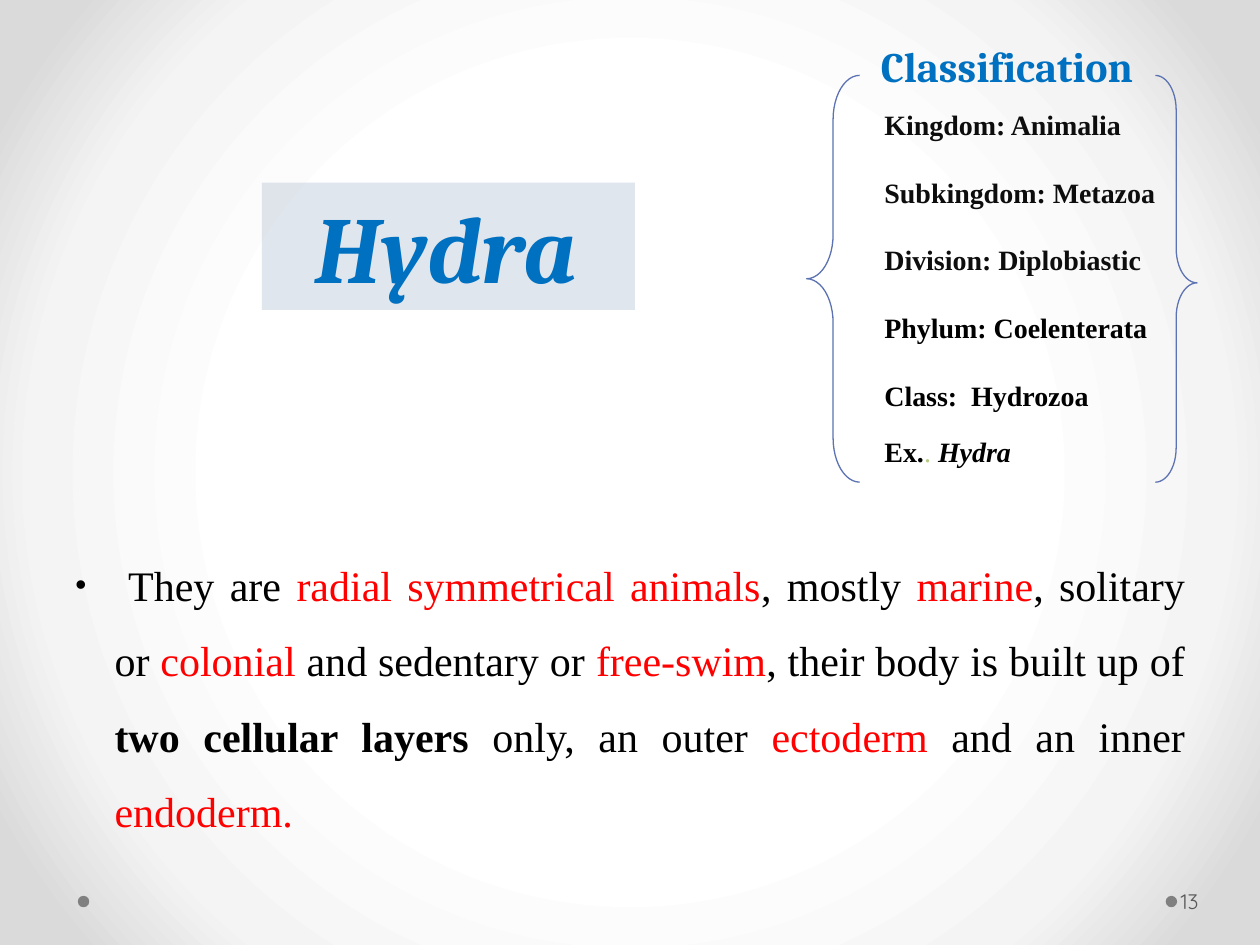
"""Build the Hydra slide with its classification and description."""
from dataclasses import dataclass

from pptx import Presentation
from pptx.dml.color import RGBColor
from pptx.enum.shapes import MSO_SHAPE
from pptx.enum.text import MSO_ANCHOR, MSO_AUTO_SIZE, PP_ALIGN
from pptx.oxml import parse_xml
from pptx.oxml.ns import nsdecls, qn
from pptx.util import Cm, Pt


@dataclass(frozen=True)
class Theme:
    blue: str = "0070C0"
    red: str = "FF0000"
    black: str = "000000"
    charcoal: str = "0D0D0D"
    green: str = "B3CC82"
    brace: str = "5C72B2"
    panel: str = "C7D1DE"
    dot: str = "808080"
    number: str = "595959"
    backdrop: tuple = ((50, "FFFFFF"), (76, "F4F4F4"), (92, "DADADA"))
    heading: str = "Cambria"
    body: str = "Times New Roman"
    bullet: str = "Arial"
    digits: str = "Quicksand"
    title_size: int = 54
    body_size: int = 24
    bullet_size: int = 18
    rank_size: int = 16
    number_size: int = 12


class SlideBuilder:
    def __init__(self, slide, theme):
        self.slide = slide
        self.theme = theme

    def background(self):
        stops = "".join(
            f'<a:gs pos="{position * 1000}"><a:srgbClr val="{color}"/></a:gs>'
            for position, color in self.theme.backdrop
        )
        self.slide.background.fill.solid()
        properties = self.slide.element.find(".//" + qn("p:bgPr"))
        properties.replace(properties[0], parse_xml(
            f'<a:gradFill {nsdecls("a")} rotWithShape="1"><a:gsLst>{stops}</a:gsLst>'
            '<a:path path="circle"><a:fillToRect l="50000" t="50000" r="50000" b="50000"/>'
            "</a:path></a:gradFill>"
        ))

    def shape(self, kind, box, color, opacity=None):
        shape = self.slide.shapes.add_shape(kind, *map(Cm, box))
        shape.shadow.inherit = False
        shape.fill.solid()
        shape.fill.fore_color.rgb = RGBColor.from_string(color)
        shape.line.fill.background()
        if opacity:
            shape.element.spPr.find(".//" + qn("a:srgbClr")).append(
                parse_xml(f'<a:alpha {nsdecls("a")} val="{opacity * 1000}"/>')
            )
        return shape

    def brace(self, box, tip, rotation=0):
        brace = self.slide.shapes.add_shape(MSO_SHAPE.LEFT_BRACE, *map(Cm, box))
        brace.shadow.inherit = False
        brace.fill.background()
        brace.line.color.rgb = RGBColor.from_string(self.theme.brace)
        brace.line.width = Pt(0.75)
        brace.adjustments[0] = 0.83
        brace.adjustments[1] = tip
        brace.rotation = rotation

    def text_box(self, box, wrap=True, grow=True):
        frame = self.slide.shapes.add_textbox(*map(Cm, box)).text_frame
        frame.word_wrap = wrap
        if grow:
            frame.auto_size = MSO_AUTO_SIZE.SHAPE_TO_FIT_TEXT
        return frame

    def paragraph(self, paragraph, margin=0, indent=0, align=PP_ALIGN.LEFT,
                  spacing=None, after=None, bullet=None):
        paragraph.alignment = align
        properties = paragraph._p.get_or_add_pPr()
        properties.set("marL", str(Cm(margin)))
        properties.set("indent", str(Cm(indent)))
        if spacing:
            paragraph.line_spacing = spacing
        if after:
            paragraph.space_after = Pt(after)
        if bullet:
            properties.append(parse_xml(
                f'<a:buFont {nsdecls("a")} typeface="{self.theme.bullet}"/>'))
            properties.append(parse_xml(f'<a:buChar {nsdecls("a")} char="{bullet}"/>'))
        return paragraph

    def run(self, paragraph, text, font, size, color, bold=False, italic=False):
        run = paragraph.add_run()
        run.text = text
        run.font.name = font
        run.font.size = Pt(size)
        run.font.color.rgb = RGBColor.from_string(color)
        run.font.bold = bold
        run.font.italic = italic


def main():
    theme = Theme()
    deck = Presentation()
    deck.slide_width, deck.slide_height = Cm(25.4), Cm(19.05)
    builder = SlideBuilder(deck.slides.add_slide(deck.slide_layouts[6]), theme)
    builder.background()

    for left in (23.5, 1.57):
        builder.shape(MSO_SHAPE.OVAL, (left, 18.06, 0.23, 0.23), theme.dot)

    title = builder.shape(MSO_SHAPE.RECTANGLE, (5.28, 3.68, 7.52, 2.57), theme.panel, 54)
    title.text_frame.vertical_anchor = MSO_ANCHOR.TOP
    hydra = builder.paragraph(title.text_frame.paragraphs[0], margin=0.84)
    builder.run(hydra, "Hydra", theme.heading, theme.title_size, theme.blue, True, True)

    ranks = (
        ("Kingdom: Animalia", theme.charcoal),
        ("Subkingdom: Metazoa", theme.charcoal),
        ("Division: Diplobiastic", theme.charcoal),
        ("Phylum: Coelenterata", theme.black),
        ("Class:  Hydrozoa", theme.black),
    )
    classification = builder.text_box((16.31, 1.7, 9.42, 7.9))
    rank = classification.paragraphs[0]
    for text, color in ranks:
        builder.paragraph(rank, margin=1.27, spacing=1.5, after=10)
        builder.run(rank, text, theme.body, theme.rank_size, color, True)
        rank = classification.add_paragraph()
    builder.paragraph(rank, margin=1.27, spacing=1.15, after=10)
    builder.run(rank, "Ex.", theme.body, theme.rank_size, theme.black, True)
    builder.run(rank, ". ", theme.body, theme.rank_size, theme.green)
    builder.run(rank, "Hydra", theme.body, theme.rank_size, theme.black, True, True)

    description = builder.paragraph(
        builder.text_box((0.64, 10.64, 23.5, 6.4)).paragraphs[0],
        margin=1.42, indent=-0.79, align=PP_ALIGN.JUSTIFY, spacing=1.5, after=10, bullet="•",
    )
    builder.run(description, " ", theme.bullet, theme.bullet_size, theme.black)
    phrases = (
        ("They are ", theme.black, False),
        ("radial symmetrical animals", theme.red, False),
        (", mostly ", theme.black, False),
        ("marine", theme.red, False),
        (", solitary or ", theme.black, False),
        ("colonial", theme.red, False),
        (" and sedentary or ", theme.black, False),
        ("free-swim", theme.red, False),
        (", their body is built up of ", theme.black, False),
        ("two cellular layers", theme.black, True),
        (" only, an outer ", theme.black, False),
        ("ectoderm", theme.red, False),
        (" and an inner ", theme.black, False),
        ("endoderm.", theme.red, False),
    )
    for text, color, bold in phrases:
        builder.run(description, text, theme.body, theme.body_size, color, bold)

    builder.brace((23.29, 1.52, 0.84, 8.2), 0.49, 180)
    builder.brace((16.26, 1.52, 1.07, 8.2), 0.5)

    number_frame = builder.text_box((23.72, 17.65, 1.55, 1.02), grow=False)
    number_frame.vertical_anchor = MSO_ANCHOR.MIDDLE
    number_frame.margin_left = Cm(0.08)
    number_frame.margin_right = Cm(0.13)
    number = builder.paragraph(number_frame.paragraphs[0])
    builder.run(number, "13", theme.digits, theme.number_size, theme.number)

    heading = builder.paragraph(
        builder.text_box((17.32, 0.69, 6.1, 1.27), wrap=False).paragraphs[0])
    builder.run(heading, " Classification", theme.heading, theme.body_size, theme.blue, True)

    deck.save("out.pptx")


if __name__ == "__main__":
    main()
